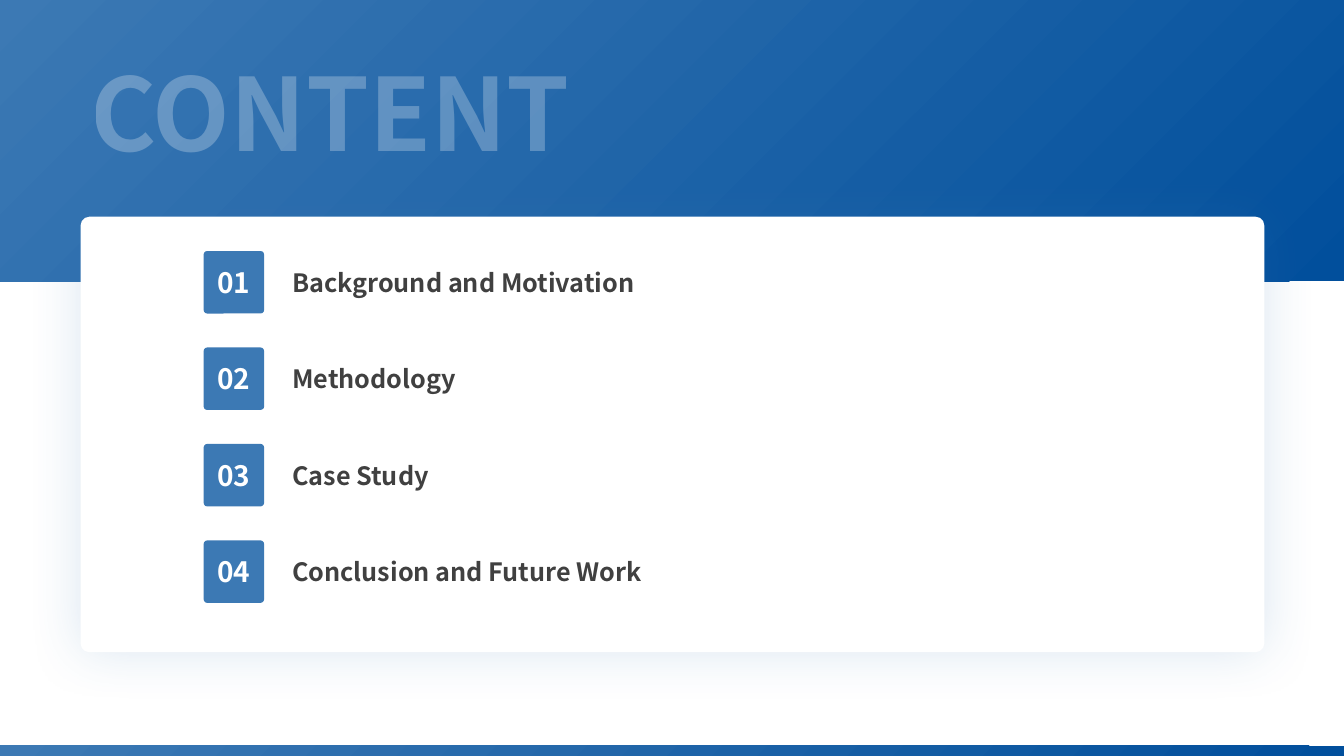
"""Build the CONTENT agenda slide with four numbered sections."""
from dataclasses import dataclass

from lxml import etree
from pptx import Presentation
from pptx.dml.color import RGBColor
from pptx.enum.shapes import MSO_SHAPE
from pptx.enum.text import MSO_ANCHOR, MSO_AUTO_SIZE, PP_ALIGN
from pptx.oxml.ns import qn
from pptx.util import Inches, Pt

TITLE = "CONTENT"
SECTIONS = [
    "Background and Motivation",
    "Methodology",
    "Case Study",
    "Conclusion and Future Work",
]

RECT = MSO_SHAPE.RECTANGLE
ROUNDED = MSO_SHAPE.ROUNDED_RECTANGLE
TOP, MIDDLE = MSO_ANCHOR.TOP, MSO_ANCHOR.MIDDLE
LEFT, CENTER = PP_ALIGN.LEFT, PP_ALIGN.CENTER
FIT_SHAPE = MSO_AUTO_SIZE.SHAPE_TO_FIT_TEXT
TITLE_ONLY = 5


@dataclass(frozen=True)
class Theme:
    font: str = "Noto Sans CJK SC"
    dark: str = "014F9C"
    blue: str = "3C79B4"
    white: str = "FFFFFF"
    text: str = "404040"
    title_size: int = 72
    number_size: int = 20
    label_size: int = 18
    title_alpha: int = 25
    shadow_alpha: int = 18
    shadow_blur: int = 39


THEME = Theme()
SLIDE_W, SLIDE_H = 13.33, 7.5
BAND_BOX = (0, -0.02, SLIDE_W, 2.81)
FOOTER_BOX = (0, 7.4, SLIDE_W, 0.1)
CARD_BOX = (0.8, 2.15, 11.74, 4.32)
TITLE_BOX = (0.8, 0.45, 5.27, 1.31)
BADGE_X, BADGE_W, BADGE_H = 2.02, 0.6, 0.62
LABEL_X, LABEL_W, LABEL_H = 2.8, 6.67, 0.4
FIRST_Y, PITCH = 2.49, 0.957


def inches(box):
    return [Inches(v) for v in box]


def set_alpha(color, percent):
    etree.SubElement(color, qn("a:alpha"), val=str(percent * 1000))


def add_block(slide, kind, box, color=None, corner=None):
    sp = slide.shapes.add_shape(kind, *inches(box))
    sp.shadow.inherit = False
    sp.line.fill.background()
    if corner is not None:
        sp.adjustments[0] = corner
    if color:
        sp.fill.solid()
        sp.fill.fore_color.rgb = RGBColor.from_string(color)
    else:
        sp.fill.gradient()
        sp.fill.gradient_angle = 135
        for stop, shade in zip(sp.fill.gradient_stops, (THEME.dark, THEME.blue)):
            stop.color.rgb = RGBColor.from_string(shade)
    return sp


def add_glow(sp):
    effects = sp.element.spPr.find(qn("a:effectLst"))
    shadow = etree.SubElement(effects, qn("a:outerShdw"), dist="0", dir="0",
                              blurRad=str(Pt(THEME.shadow_blur)),
                              algn="ctr", rotWithShape="0")
    color = etree.SubElement(shadow, qn("a:srgbClr"), val=THEME.blue)
    set_alpha(color, THEME.shadow_alpha)


def write(sp, text, size, color, align=LEFT, anchor=TOP):
    tf = sp.text_frame
    tf.text = text
    tf.word_wrap = True
    tf.vertical_anchor = anchor
    p = tf.paragraphs[0]
    p.alignment = align
    font = p.runs[0].font
    font.name, font.size, font.bold = THEME.font, Pt(size), True
    font.color.rgb = RGBColor.from_string(color)
    return tf


def add_title(slide):
    title = slide.shapes.title
    slide.shapes.element.append(title.element)
    title.left, title.top, title.width, title.height = inches(TITLE_BOX)
    tf = write(title, TITLE, THEME.title_size, THEME.white)
    tf.auto_size = FIT_SHAPE
    r = tf.paragraphs[0].runs[0]
    set_alpha(r.font.fill.fore_color and r._r.find(".//" + qn("a:srgbClr")),
              THEME.title_alpha)


def add_section(slide, index, label):
    y = FIRST_Y + index * PITCH
    badge = add_block(slide, ROUNDED, (BADGE_X, y, BADGE_W, BADGE_H), THEME.blue, 0.06)
    tf = write(badge, f"{index + 1:02}", THEME.number_size, THEME.white, CENTER, MIDDLE)
    tf.margin_left = tf.margin_top = tf.margin_right = tf.margin_bottom = 0
    label_y = y + (BADGE_H - LABEL_H) / 2
    box = slide.shapes.add_textbox(*inches((LABEL_X, label_y, LABEL_W, LABEL_H)))
    write(box, label, THEME.label_size, THEME.text).auto_size = FIT_SHAPE


def main():
    prs = Presentation()
    prs.slide_width, prs.slide_height = Inches(SLIDE_W), Inches(SLIDE_H)
    slide = prs.slides.add_slide(prs.slide_layouts[TITLE_ONLY])
    add_block(slide, RECT, BAND_BOX)
    add_glow(add_block(slide, ROUNDED, CARD_BOX, THEME.white, 0.02))
    add_title(slide)
    for index, label in enumerate(SECTIONS):
        add_section(slide, index, label)
    add_block(slide, RECT, FOOTER_BOX)
    prs.save("out.pptx")


if __name__ == "__main__":
    main()
